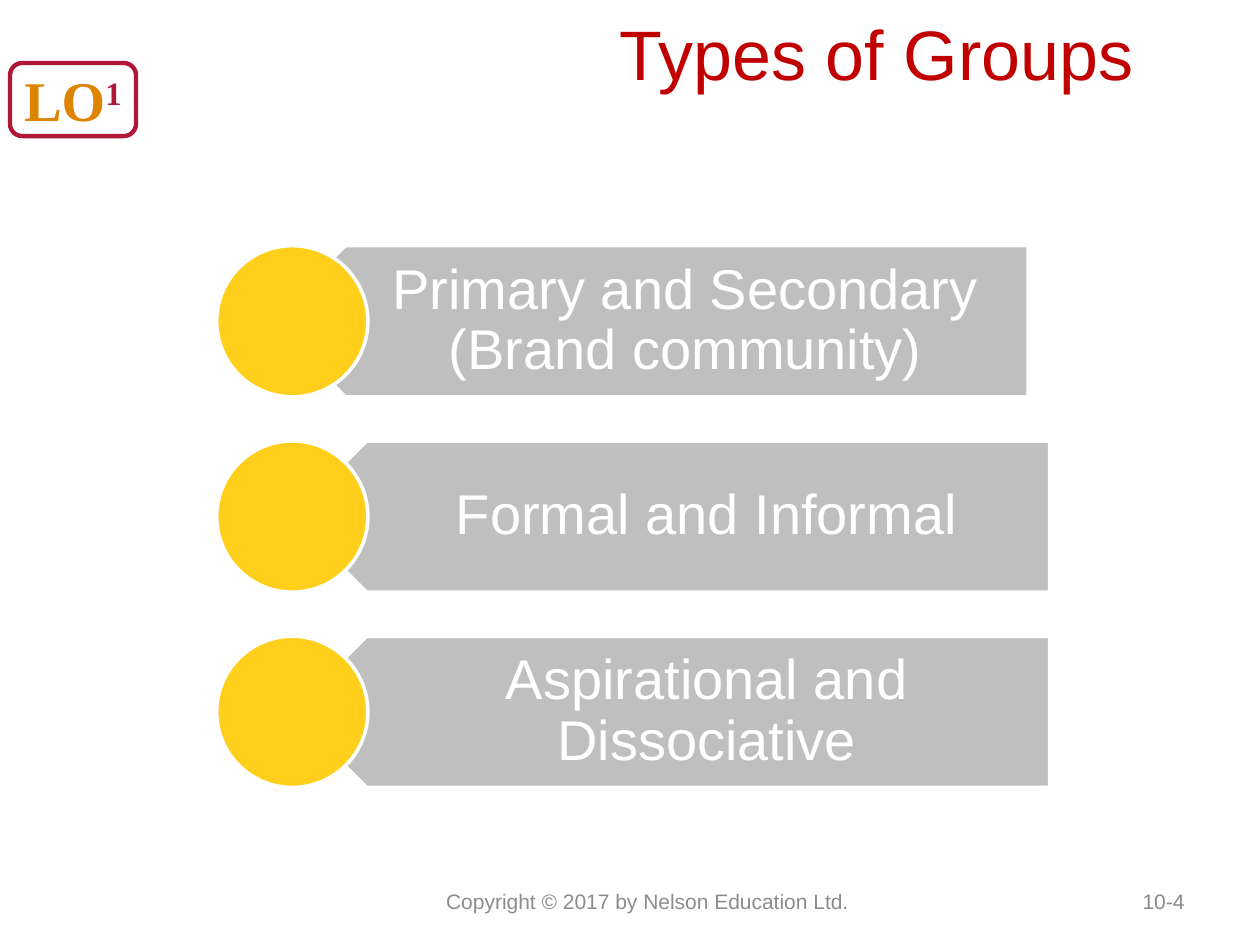
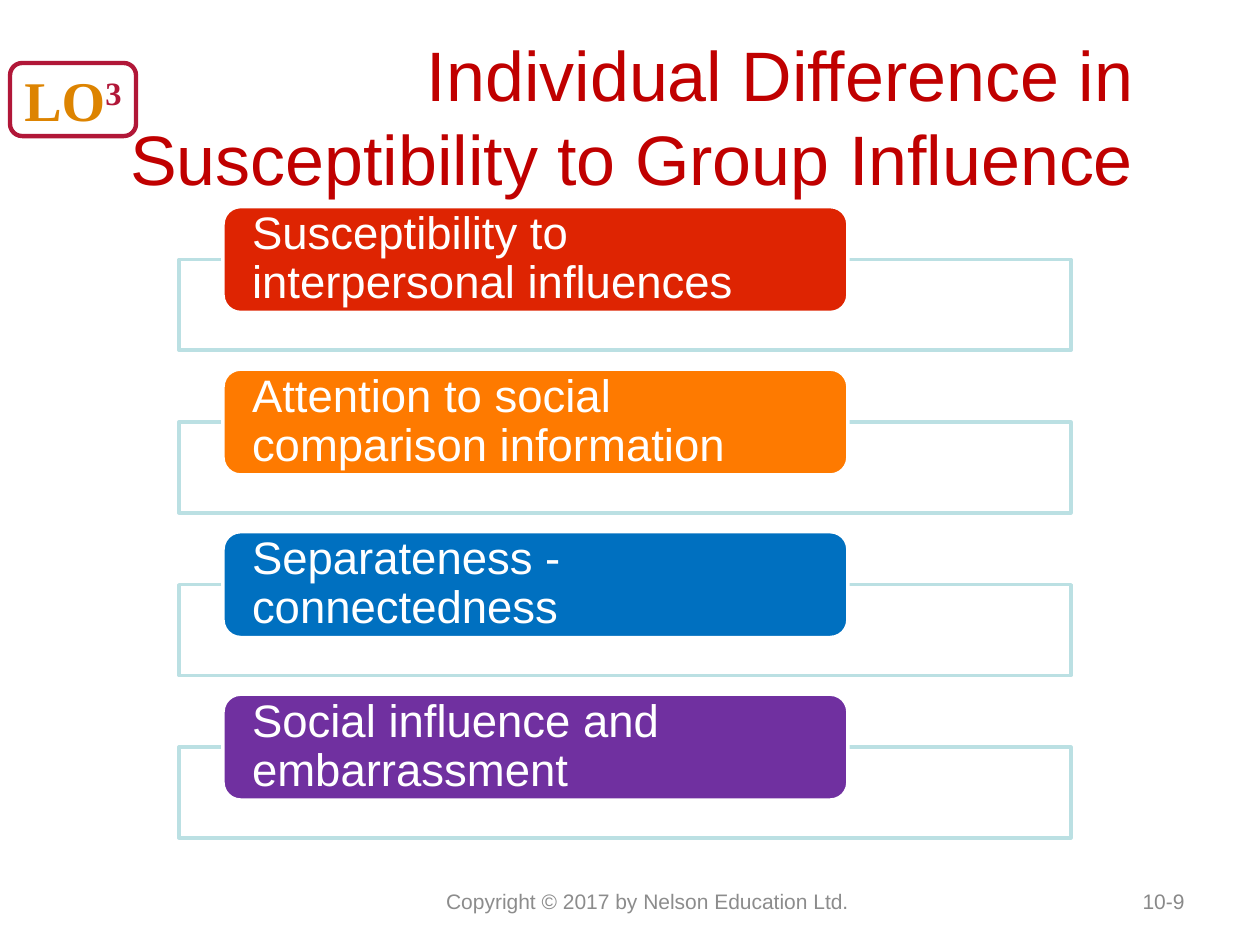
from dataclasses import dataclass

from pptx import Presentation
from pptx.dml.color import RGBColor
from pptx.enum.shapes import MSO_SHAPE as Shape
from pptx.enum.text import MSO_ANCHOR as Anchor, PP_ALIGN as Align
from pptx.util import Inches, Pt

WHITE = RGBColor(0xFF, 0xFF, 0xFF)
TITLE_RED = RGBColor(0xC0, 0x00, 0x00)
BADGE_RED = RGBColor(0xB1, 0x17, 0x38)
BADGE_GOLD = RGBColor(0xDD, 0x84, 0x01)
BAND_GREY = RGBColor(0xBF, 0xBF, 0xBF)
YELLOW = RGBColor(0xFF, 0xCF, 0x1B)
FRAME_BLUE = RGBColor(0xBB, 0xE0, 0xE3)
RED = RGBColor(0xDE, 0x24, 0x02)
ORANGE = RGBColor(0xFE, 0x7A, 0x00)
BLUE = RGBColor(0x00, 0x70, 0xC0)
PURPLE = RGBColor(0x70, 0x30, 0xA0)
NUMBER_GREY = RGBColor(0x89, 0x89, 0x89)
FOOTER_GREY = RGBColor(0x8C, 0x8C, 0x8C)

SANS = "Arial"
SERIF = "Times New Roman"
COPYRIGHT = "Copyright © 2017 by Nelson Education Ltd."


@dataclass(frozen=True)
class Box:
    left: float
    top: float
    width: float
    height: float

    def lengths(self) -> list:
        return [Inches(v) for v in (self.left, self.top, self.width, self.height)]


@dataclass(frozen=True)
class TextStyle:
    size: float
    color: RGBColor
    align: Align
    margins: tuple = (0.1, 0.05, 0.1, 0.05)
    line_spacing: float = 1.0


@dataclass(frozen=True)
class GroupType:
    label: str
    indent: float


@dataclass(frozen=True)
class Difference:
    label: str
    color: RGBColor


TITLE = TextStyle(40, TITLE_RED, Align.RIGHT)
BAND_TEXT = TextStyle(32, WHITE, Align.CENTER, (0.53, 0.13, 0.25, 0.13), 0.9)
LABEL_TEXT = TextStyle(26, WHITE, Align.LEFT, (0.19, 0, 0.19, 0), 0.9)
PAGE_NUMBER = TextStyle(12, NUMBER_GREY, Align.RIGHT)
FOOTER = TextStyle(12, FOOTER_GREY, Align.CENTER)

GROUP_TYPES = [
    GroupType("Primary and Secondary (Brand community)", 0.42),
    GroupType("Formal and Informal", 0.59),
    GroupType("Aspirational and Dissociative", 0.59),
]
DIFFERENCES = [
    Difference("Susceptibility to interpersonal influences", RED),
    Difference("Attention to social comparison information", ORANGE),
    Difference("Separateness - connectedness", BLUE),
    Difference("Social influence and embarrassment", PURPLE),
]


def add_text(slide, box: Box, text: str, style: TextStyle):
    sp = slide.shapes.add_textbox(*box.lengths())
    tf = sp.text_frame
    tf.word_wrap = True
    tf.vertical_anchor = Anchor.MIDDLE
    (tf.margin_left, tf.margin_top,
     tf.margin_right, tf.margin_bottom) = map(Inches, style.margins)
    tf.text = text
    p = tf.paragraphs[0]
    p.alignment = style.align
    p.line_spacing = style.line_spacing
    p.font.name = SANS
    p.font.size = Pt(style.size)
    p.font.color.rgb = style.color
    return sp


def add_shape(slide, kind: Shape, box: Box, fill: RGBColor,
              line: RGBColor = WHITE, line_width: float = 2):
    sp = slide.shapes.add_shape(kind, *box.lengths())
    sp.shadow.inherit = False
    sp.fill.solid()
    sp.fill.fore_color.rgb = fill
    sp.line.color.rgb = line
    sp.line.width = Pt(line_width)
    return sp


def add_objective_badge(slide, number: int) -> None:
    """Draw the learning-objective badge with its raised number."""
    sp = add_shape(slide, Shape.ROUNDED_RECTANGLE, Box(0.08, 0.5, 1, 0.58),
                   WHITE, BADGE_RED, 2.5)
    tf = sp.text_frame
    tf.word_wrap = False
    tf.vertical_anchor = Anchor.MIDDLE
    p = tf.paragraphs[0]
    p.alignment = Align.CENTER
    for text, color in (("LO", BADGE_GOLD), (str(number), BADGE_RED)):
        r = p.add_run()
        r.text = text
        r.font.name = SERIF
        r.font.size = Pt(32)
        r.font.bold = True
        r.font.color.rgb = color
    r.font._element.set("baseline", "30000")


def add_base_slide(prs, title: str, title_top: float, objective: int, page: str):
    """Add a slide with the title, badge and footer that all slides share."""
    slide = prs.slides.add_slide(prs.slide_layouts[6])
    add_text(slide, Box(0.67, title_top, 8.42, 1.33), title, TITLE)
    add_objective_badge(slide, objective)
    add_text(slide, Box(7.17, 6.95, 2.33, 0.4), page, PAGE_NUMBER)
    add_text(slide, Box(3.39, 6.95, 3.5, 0.4), COPYRIGHT, FOOTER)
    return slide


def add_group_types(slide) -> None:
    left, first_top, pitch, size = 1.72, 1.95, 1.55, 1.2
    band_width, text_inset = 6.02, 0.3
    for i, group in enumerate(GROUP_TYPES):
        top = first_top + i * pitch
        band_left = left + group.indent
        band = add_shape(slide, Shape.PENTAGON,
                         Box(band_left, top, band_width, size), BAND_GREY)
        band.rotation = 180
        add_text(slide, Box(band_left + text_inset, top, band_width - text_inset, size),
                 group.label, BAND_TEXT)
        add_shape(slide, Shape.OVAL, Box(left, top, size, size), YELLOW)


def add_differences(slide) -> None:
    first_top, pitch, pad = 1.64, 1.29, 0.04
    for i, difference in enumerate(DIFFERENCES):
        top = first_top + i * pitch
        add_shape(slide, Shape.RECTANGLE, Box(1.42, top + 0.42, 7.08, 0.72),
                  WHITE, FRAME_BLUE)
        label = Box(1.77, top, 4.96, 0.84)
        add_shape(slide, Shape.ROUNDED_RECTANGLE, label, difference.color)
        inner = Box(label.left + pad, top + pad,
                    label.width - 2 * pad, label.height - 2 * pad)
        add_text(slide, inner, difference.label, LABEL_TEXT)


def main() -> None:
    prs = Presentation()
    prs.slide_width = Inches(10)
    prs.slide_height = Inches(7.5)
    add_group_types(add_base_slide(prs, "Types of Groups", -0.25, 1, "10-4"))
    add_differences(add_base_slide(
        prs, "Individual Difference in Susceptibility to Group Influence",
        0.25, 3, "10-9"))
    prs.save("out.pptx")


if __name__ == "__main__":
    main()
